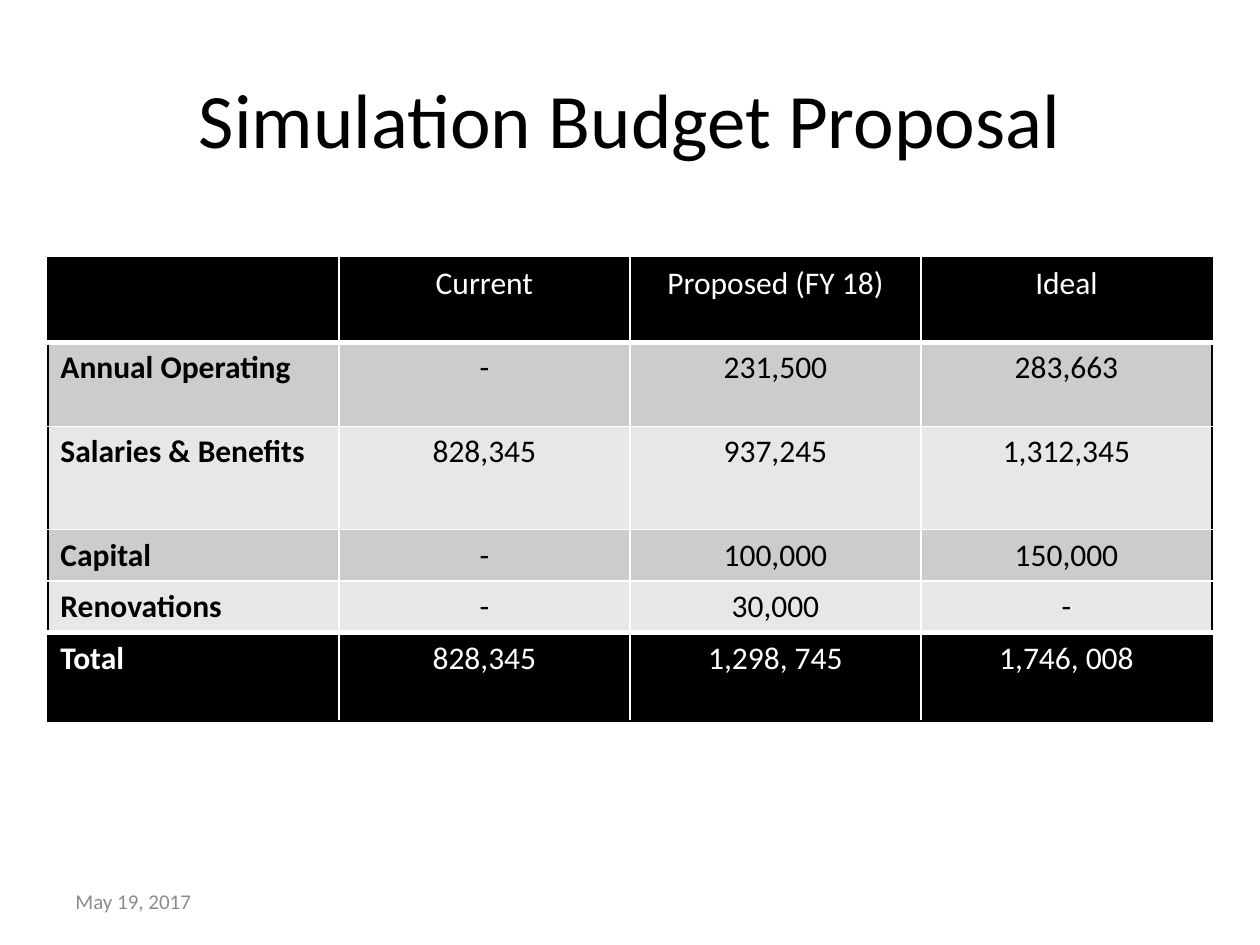
from dataclasses import dataclass

from lxml import etree
from pptx import Presentation
from pptx.dml.color import RGBColor
from pptx.enum.text import MSO_ANCHOR, PP_ALIGN
from pptx.oxml.ns import qn
from pptx.util import Inches, Pt

LEFT, MID = PP_ALIGN.LEFT, PP_ALIGN.CENTER
CORE = MSO_ANCHOR.MIDDLE
WIDE, HIGH = Inches(10), Inches(7.5)


@dataclass(frozen=True)
class Theme:
    font: str = "Calibri"
    dark: str = "000000"
    light: str = "FFFFFF"
    bands: tuple = ("CCCCCC", "E7E7E7")
    mute: str = "8C8C8C"
    head: int = 44
    body: int = 18
    note: int = 12


THEME = Theme()
ROWS = [
    ("", "Current", "Proposed (FY 18)", "Ideal"),
    ("Annual Operating", "-", "231,500", "283,663"),
    ("Salaries & Benefits", "828,345", "937,245", "1,312,345"),
    ("Capital", "-", "100,000", "150,000"),
    ("Renovations", "-", "30,000", "-"),
    ("Total", "828,345", "1,298, 745", "1,746, 008"),
]
PARTS = [0.67, 0.67, 0.82, 0.41, 0.41, 0.7]


def area(x, y, w, h):
    return int(x * WIDE), int(y * HIGH), int(w * WIDE), int(h * HIGH)


def write(frame, text, size, color, align=LEFT, bold=False):
    para = frame.paragraphs[0]
    para.alignment = align
    run = para.add_run()
    run.text = text
    style = {"name": THEME.font, "size": Pt(size), "bold": bold}
    for key, value in style.items():
        setattr(run.font, key, value)
    run.font.color.rgb = RGBColor.from_string(color)


def add_title(slide, box):
    title = slide.shapes.title
    for key, value in zip(("left", "top", "width", "height"), box):
        setattr(title, key, value)
    title.text_frame.vertical_anchor = CORE
    write(title.text_frame, "Simulation Budget Proposal", THEME.head, THEME.dark, MID)


def add_date(slide, box):
    frame = slide.shapes.add_textbox(*box).text_frame
    frame.word_wrap = True
    frame.vertical_anchor = CORE
    write(frame, "May 19, 2017", THEME.note, THEME.mute)


def edge(cell, sides):
    props = cell._tc.get_or_add_tcPr()
    for spot, (side, (color, width)) in enumerate(sides.items()):
        line = etree.Element(qn(f"a:ln{side}"), w=str(Pt(width)))
        fill = etree.SubElement(line, qn("a:solidFill"))
        etree.SubElement(fill, qn("a:srgbClr"), val=color)
        props.insert(spot, line)


def add_budget(slide, box):
    rows, cols = len(ROWS), len(ROWS[0])
    table = slide.shapes.add_table(rows, cols, *box).table
    for col in table.columns:
        col.width = box[2] // cols
    for row, part in zip(table.rows, PARTS):
        row.height = int(box[3] * part / sum(PARTS))
    outer, inner, thick = (THEME.dark, 1), (THEME.light, 1), (THEME.light, 3)
    for r, texts in enumerate(ROWS):
        first, last = r == 0, r == rows - 1
        solid = first or last
        back = THEME.dark if solid else THEME.bands[(r - 1) % 2]
        ink = THEME.light if solid else THEME.dark
        for c, text in enumerate(texts):
            cell = table.cell(r, c)
            cell.fill.solid()
            cell.fill.fore_color.rgb = RGBColor.from_string(back)
            edge(cell, {
                "L": outer if c == 0 else inner,
                "R": outer if c == cols - 1 else inner,
                "T": outer if first else thick if last else inner,
                "B": outer if last else thick if first else inner,
            })
            if text:
                align = MID if c else LEFT
                write(cell.text_frame, text, THEME.body, ink, align, c == 0)


def main():
    deck = Presentation()
    deck.slide_width, deck.slide_height = WIDE, HIGH
    slide = deck.slides.add_slide(deck.slide_layouts[5])
    add_title(slide, area(0.05, 0.04, 0.9, 0.17))
    add_budget(slide, area(0.038, 0.273, 0.924, 0.49))
    add_date(slide, area(0.05, 0.927, 0.233, 0.053))
    deck.save("out.pptx")


if __name__ == "__main__":
    main()
